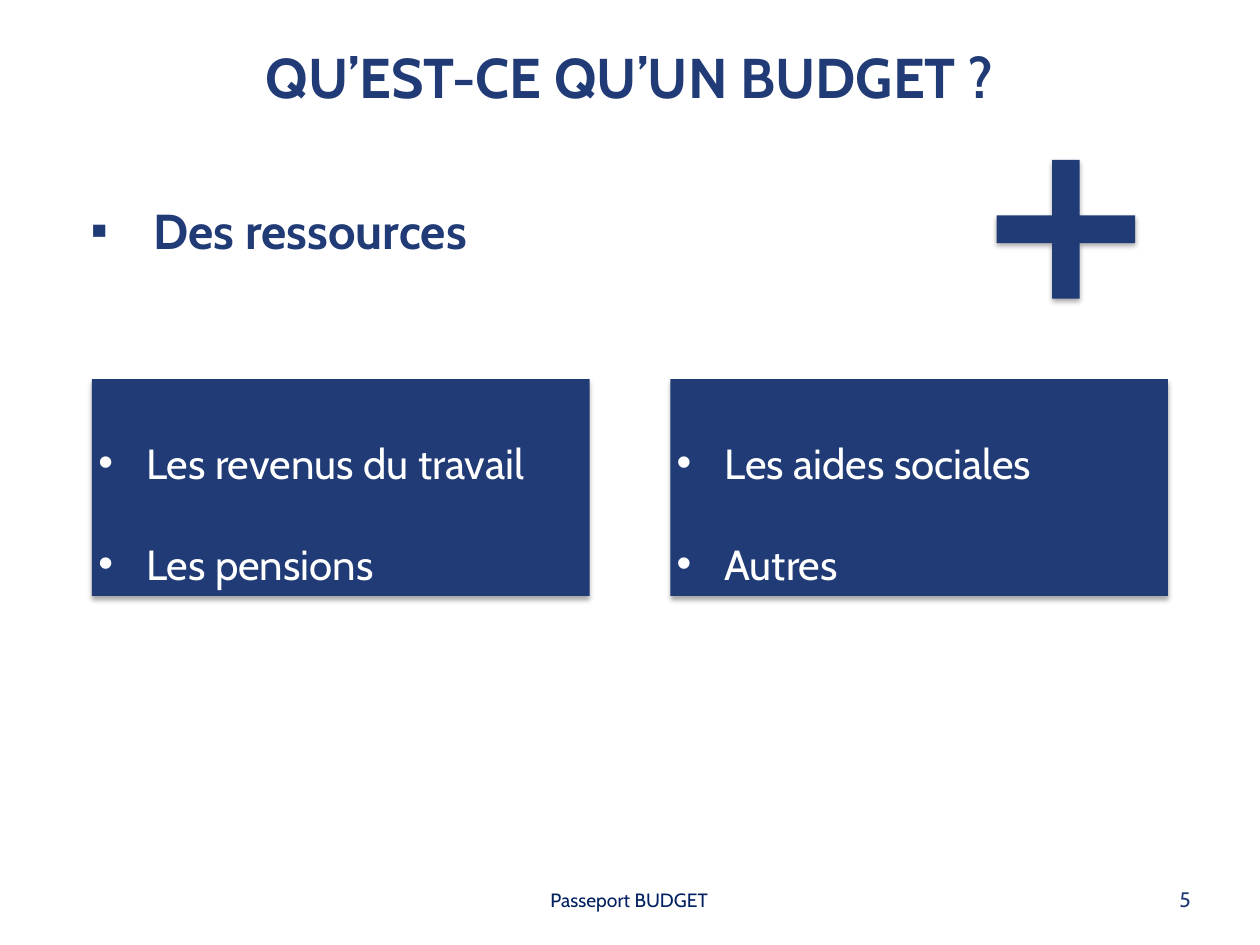
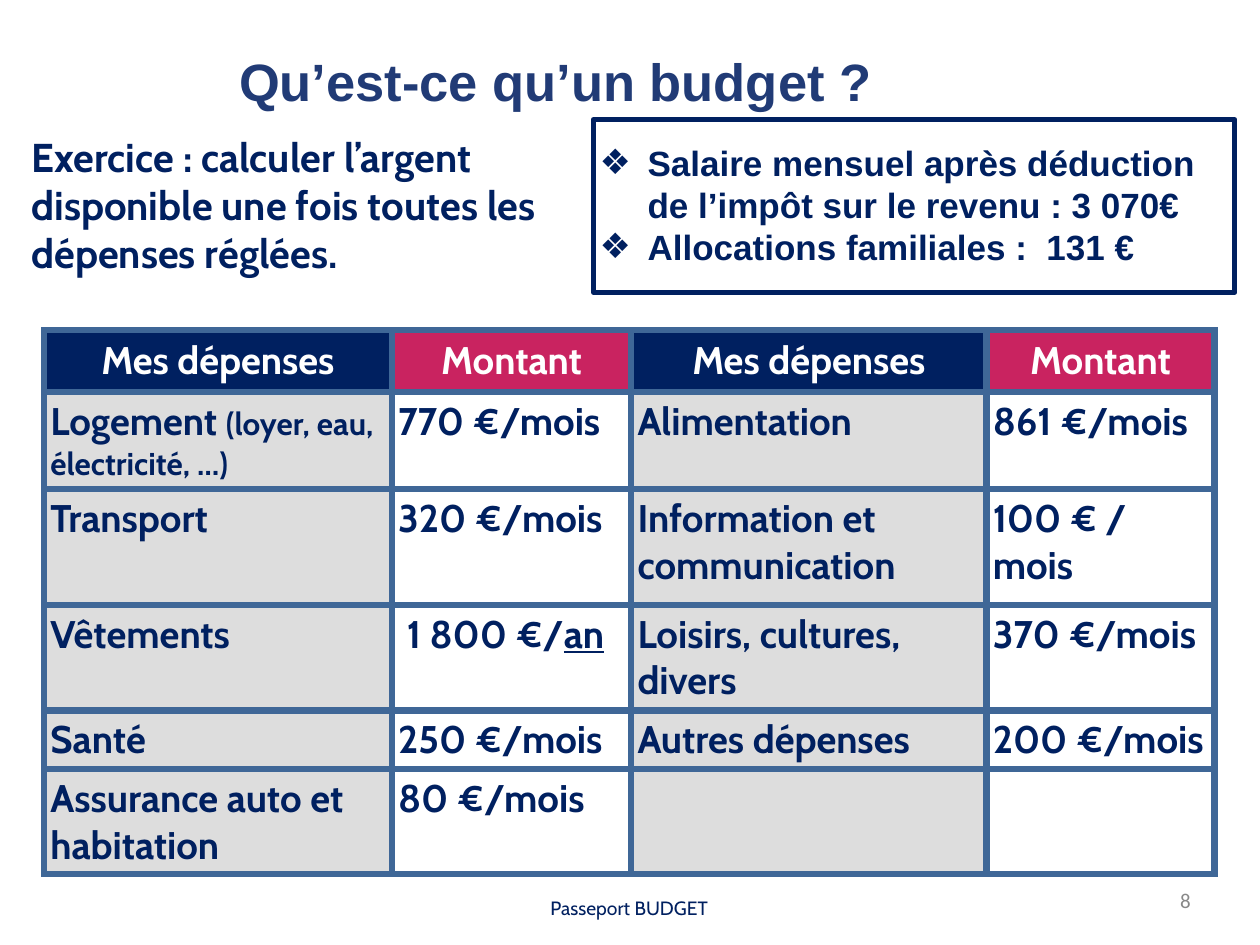
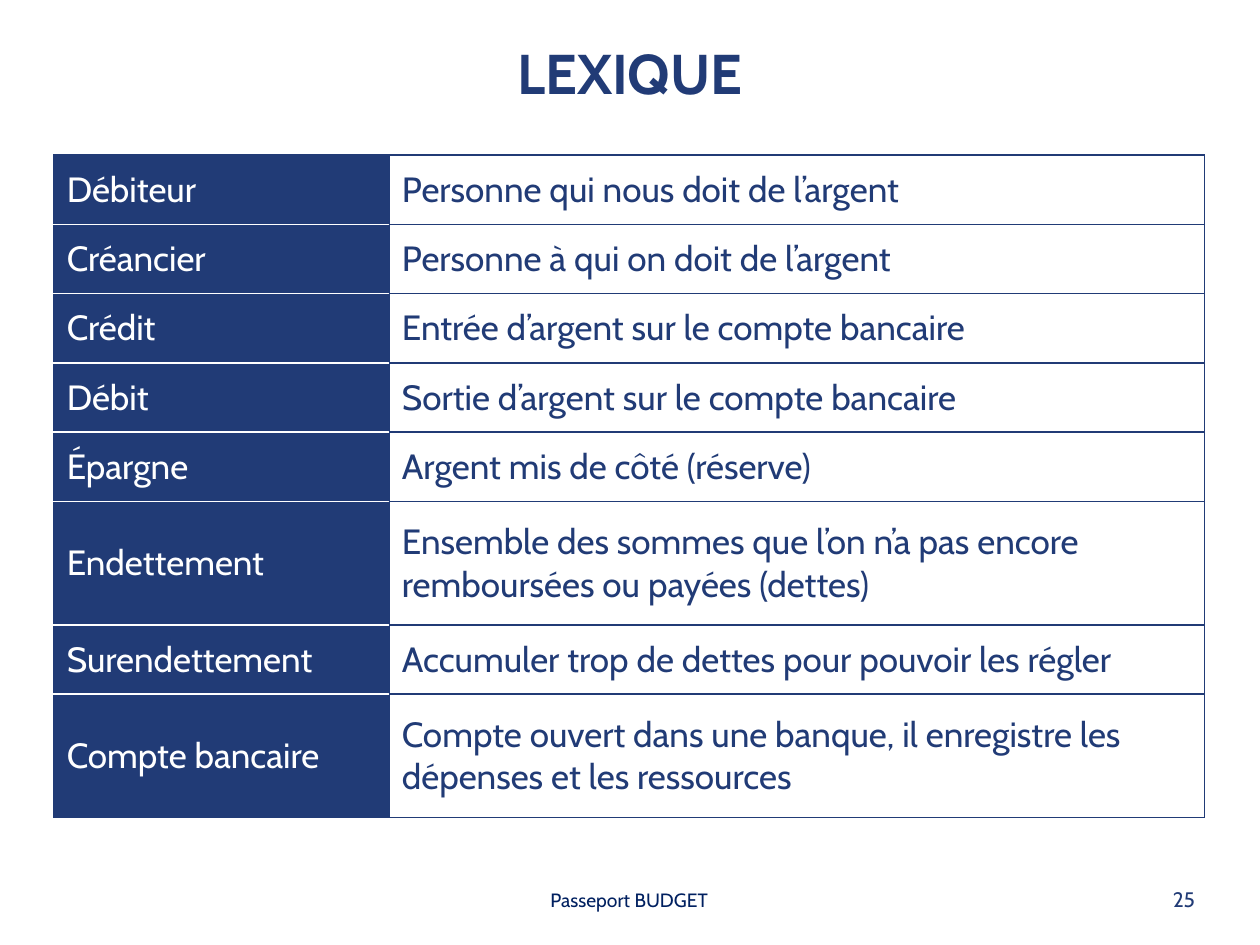
from lxml import etree
from pptx import Presentation
from pptx.dml.color import RGBColor
from pptx.enum.shapes import MSO_SHAPE
from pptx.enum.text import MSO_ANCHOR, PP_ALIGN
from pptx.oxml.ns import qn
from pptx.util import Inches, Pt

NAVY = RGBColor(0x21, 0x3B, 0x76)
INK = RGBColor(0x00, 0x20, 0x60)
STEEL = RGBColor(0x3F, 0x67, 0x97)
PINK = RGBColor(0xC9, 0x23, 0x60)
PALE = RGBColor(0xDD, 0xDD, 0xDD)
GREY = RGBColor(0x88, 0x88, 0x88)
WHITE = RGBColor(0xFF, 0xFF, 0xFF)
BLACK = RGBColor(0x00, 0x00, 0x00)

LEFT, MID, RIGHT, FULL = PP_ALIGN.LEFT, PP_ALIGN.CENTER, PP_ALIGN.RIGHT, PP_ALIGN.JUSTIFY
TOP, CORE = MSO_ANCHOR.TOP, MSO_ANCHOR.MIDDLE
RECT, CROSS = MSO_SHAPE.RECTANGLE, MSO_SHAPE.CROSS

INCOME = [["Les revenus du travail", "Les pensions"],
          ["Les aides sociales", "Autres"]]
MONEY = ["Salaire mensuel après déduction de l’impôt sur le revenu : 3 070€",
         "Allocations familiales :  131 €"]
HEADS = ["Mes dépenses", "Montant"] * 2
COSTS = [
    [[("Logement ", {}), ("(loyer, eau, électricité, …)", {"size": 18})],
     "770 €/mois", "Alimentation", "861 €/mois"],
    ["Transport", "320 €/mois", "Information et communication", "100 € / mois"],
    ["Vêtements", [(" 1 800 €/", {}), ("an", {"under": True})],
     "Loisirs, cultures, divers", "370 €/mois"],
    ["Santé", "250 €/mois", "Autres dépenses", "200 €/mois"],
    ["Assurance auto et habitation", "80 €/mois", "", ""],
]
TERMS = [
    ("Débiteur", "Personne qui nous doit de l’argent"),
    ("Créancier", "Personne à qui on doit de l’argent"),
    ("Crédit", "Entrée d’argent sur le compte bancaire"),
    ("Débit", "Sortie d’argent sur le compte bancaire"),
    ("Épargne", "Argent mis de côté (réserve)"),
    ("Endettement", "Ensemble des sommes que l’on n’a pas encore "
                    "remboursées ou payées (dettes)"),
    ("Surendettement", "Accumuler trop de dettes pour pouvoir les régler"),
    ("Compte bancaire", "Compte ouvert dans une banque, il enregistre les "
                        "dépenses et les ressources"),
]


def add(node, tag, **attrs):
    """Append a drawing element and return it."""
    return etree.SubElement(node, qn(tag), {k: str(v) for k, v in attrs.items()})


def inch(box):
    """Turn a box in inches into lengths."""
    return [Inches(v) for v in box]


def style(run, size=20, color=NAVY, bold=False, font="Cabin", under=False):
    """Set the character format of a run."""
    face = run.font
    face.size, face.name, face.bold = Pt(size), font, bold
    face.color.rgb = color
    if under:
        face.underline = True


def write(frame, paras, align=LEFT, lead=None, before=None, mark=None,
          hang=0.38, **look):
    """Fill a text frame with paragraphs of plain or mixed runs."""
    for i, para in enumerate(paras):
        line = frame.paragraphs[0] if i == 0 else frame.add_paragraph()
        line.alignment = align
        if lead:
            line.line_spacing = lead
        if before:
            line.space_before = Pt(before)
        if mark:
            props = line._p.get_or_add_pPr()
            props.set("marL", str(Inches(hang)))
            props.set("indent", str(-Inches(hang)))
            add(props, "a:buFont", typeface="Arial")
            add(props, "a:buChar", char=mark)
        for text, extra in [(para, {})] if isinstance(para, str) else para:
            run = line.add_run()
            run.text = text
            style(run, **{**look, **extra})


def inset(item, side, edge=0.05):
    """Set the margins of a frame or a cell."""
    item.margin_left = item.margin_right = Inches(side)
    item.margin_top = item.margin_bottom = Inches(edge)


def label(slide, box, paras, anchor=TOP, pad=0.05, wrap=True, **form):
    """Add a text box."""
    frame = slide.shapes.add_textbox(*inch(box)).text_frame
    frame.word_wrap, frame.vertical_anchor = wrap, anchor
    inset(frame, pad)
    write(frame, paras, **form)


def title(slide, box, text, **form):
    """Add the centred slide title."""
    label(slide, box, [text], **{"align": MID, "size": 32, "bold": True, **form})


def footer(slide, top=7):
    """Add the footer line."""
    label(slide, (3.41, top, 3.17, 0.29), ["Passeport BUDGET"], anchor=CORE,
          align=MID, size=11, color=INK)


def number(slide, box, text, **form):
    """Add the page number."""
    label(slide, box, [text], **{"anchor": CORE, "align": RIGHT, "size": 12,
                                 "wrap": False, **form})


def block(slide, kind, box):
    """Add a navy shape with a soft shadow."""
    shape = slide.shapes.add_shape(kind, *inch(box))
    shape.fill.solid()
    shape.fill.fore_color.rgb = NAVY
    shape.line.fill.background()
    shape.shadow.inherit = False
    glow = add(shape._element.spPr.find(qn("a:effectLst")), "a:outerShdw",
               blurRad=Pt(3), dist=Pt(1.8), dir=5400000, rotWithShape=0)
    add(add(glow, "a:srgbClr", val=BLACK), "a:alpha", val=35000)
    return shape


def card(slide, box, items):
    """Add a navy card with a bulleted list."""
    frame = block(slide, RECT, box).text_frame
    frame.word_wrap, frame.vertical_anchor = True, CORE
    inset(frame, 0.05)
    write(frame, items, lead=2.0, mark="•", size=24, color=WHITE)


def panel(slide, box, items):
    """Add an outlined box with a list inside."""
    left, top, width, height = box
    shape = slide.shapes.add_shape(RECT, *inch(box))
    shape.shadow.inherit = False
    shape.fill.background()
    shape.line.color.rgb, shape.line.width = INK, Pt(3)
    label(slide, (left, top + 0.12, width - 0.17, height - 0.26), items,
          anchor=CORE, mark="❖", size=20, color=INK, bold=True, font="Arial")


def edges(cell, colors, width):
    """Draw the left, right, top and bottom borders of a cell."""
    props = cell._tc.get_or_add_tcPr()
    for side, color in zip("LRTB", colors):
        line = add(props, "a:ln" + side, w=Pt(width))
        add(add(line, "a:solidFill"), "a:srgbClr", val=color)


def grid(slide, spot, cols, rows):
    """Add a plain table with the given column widths and row heights."""
    size = sum(cols), sum(rows)
    table = slide.shapes.add_table(len(rows), len(cols), *inch(spot + size)).table
    table.first_row = table.horz_banding = False
    for col, width in zip(table.columns, cols):
        col.width = Inches(width)
    for row, height in zip(table.rows, rows):
        row.height = Inches(height)
    return table


def fill(cell, text, back, lines, width=1, anchor=CORE, pad=0.1, **form):
    """Format a table cell and write its text."""
    edges(cell, lines, width)
    cell.fill.solid()
    cell.fill.fore_color.rgb = back
    cell.vertical_anchor = anchor
    inset(cell, pad)
    if text:
        write(cell.text_frame, [text], **form)


def costs(slide, spot):
    """Add the table of expenses."""
    table = grid(slide, spot, (2.76, 1.9, 2.82, 1.81),
                 (0.49, 0.77, 0.92, 0.84, 0.46, 0.83))
    for r, row in enumerate([HEADS] + COSTS):
        head = r == 0
        for c, text in enumerate(row):
            back = ((INK, PINK) if head else (PALE, WHITE))[c % 2]
            fill(table.cell(r, c), text, back, [STEEL] * 4, width=4, pad=0.05,
                 anchor=CORE if head else TOP, align=MID if head else LEFT,
                 size=22, bold=True, color=WHITE if head else INK)


def terms(slide, spot):
    """Add the table of terms and meanings."""
    tall = ("Endettement", "Compte bancaire")
    table = grid(slide, spot, (2.66, 6.47),
                 [0.98 if term in tall else 0.55 for term, _ in TERMS])
    last = len(TERMS) - 1
    for r, (term, sense) in enumerate(TERMS):
        lines = [NAVY, NAVY, WHITE if r else NAVY, WHITE if r < last else NAVY]
        fill(table.cell(r, 0), term, NAVY, lines, color=WHITE)
        fill(table.cell(r, 1), sense, WHITE, [NAVY] * 4)


def income(slide):
    """Build the slide on resources."""
    label(slide, (0.67, 1.54, 3.8, 0.57), ["Des ressources"], align=FULL,
          before=6, mark="▪", hang=0.5, size=28, bold=True)
    title(slide, (1.38, 0.29, 7.24, 0.72), "QU’EST-CE QU’UN BUDGET ?")
    block(slide, CROSS, (7.91, 1.27, 1.1, 1.1)).adjustments[0] = 0.4
    footer(slide)
    number(slide, (9.31, 6.99, 0.19, 0.3), "5")
    for i, items in enumerate(INCOME):
        card(slide, (0.73 + i * 4.59, 3.01, 3.95, 1.72), items)


def budget(slide):
    """Build the exercise slide."""
    label(slide, (0.2, 1, 4.39, 1.26),
          ["Exercice : calculer l’argent disponible une fois toutes les "
           "dépenses réglées."], before=5, size=23, color=INK, bold=True)
    panel(slide, (4.71, 0.95, 5.09, 1.37), MONEY)
    costs(slide, (0.35, 2.62))
    number(slide, (9.21, 7, 0.29, 0.29), "8", font="Calibri", color=GREY)
    title(slide, (0.59, 0.34, 7.64, 0.61), " Qu’est-ce qu’un budget ? ",
          size=30, font="Arial")
    footer(slide, 7.06)


def lexicon(slide):
    """Build the glossary slide."""
    title(slide, (1.88, 0.26, 6.24, 0.64), "LEXIQUE")
    footer(slide)
    number(slide, (9.21, 6.99, 0.43, 0.3), "25", anchor=TOP, align=LEFT,
           pad=0.1, wrap=True)
    terms(slide, (0.43, 1.23))


def main():
    """Build the deck and save it."""
    deck = Presentation()
    deck.slide_width, deck.slide_height = Inches(10), Inches(7.5)
    for build in (income, budget, lexicon):
        build(deck.slides.add_slide(deck.slide_layouts[6]))
    deck.save("out.pptx")


if __name__ == "__main__":
    main()
